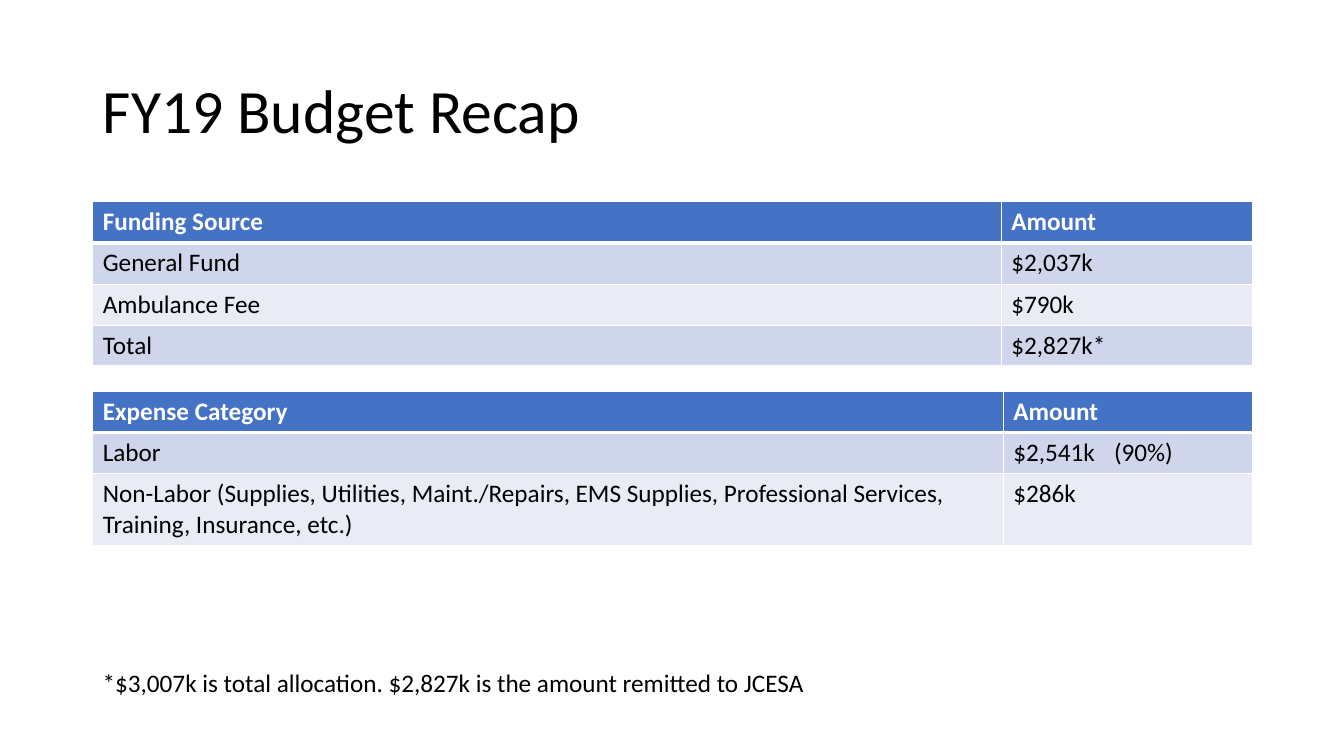
from dataclasses import dataclass

import pptx
import pptx.dml.color
import pptx.enum.text
import pptx.oxml
import pptx.oxml.ns
import pptx.util
from pptx.util import Inches

RGB = pptx.dml.color.RGBColor
BLACK = RGB(0x00, 0x00, 0x00)
WHITE = RGB(0xFF, 0xFF, 0xFF)
BLUE = RGB(0x44, 0x72, 0xC4)
BANDS = (RGB(0xE9, 0xEB, 0xF5), RGB(0xCF, 0xD5, 0xEA))

LEFT = Inches(0.92)
WIDTH = Inches(11.5)
FONT = "Calibri"


@dataclass
class Budget:
    top: float
    split: float
    heights: list[float]
    rows: list[tuple[str, str]]


BUDGETS = [
    Budget(2, 9.01, [0.41, 0.41, 0.4, 0.4], [
        ("Funding Source", "Amount"),
        ("General Fund", "$2,037k"),
        ("Ambulance Fee", "$790k"),
        ("Total", "$2,827k*"),
    ]),
    Budget(3.88, 9.03, [0.41, 0.41, 0.69], [
        ("Expense Category", "Amount"),
        ("Labor", "$2,541k\t(90%)"),
        ("Non-Labor (Supplies, Utilities, Maint./Repairs, EMS Supplies, "
         "Professional Services, Training, Insurance, etc.)", "$286k"),
    ]),
]


def write(frame, text: str, size: float = 18, color: RGB = BLACK,
          bold: bool = False) -> None:
    frame.text = text
    for run in frame.paragraphs[0].runs:
        run.font.name = FONT
        run.font.size = pptx.util.Pt(size)
        run.font.bold = bold
        run.font.color.rgb = color


def rule(cell, row: int) -> None:
    """Draw white cell borders, heavy between the header and the body."""
    props = cell._tc.get_or_add_tcPr()
    heavy = {0: "lnB", 1: "lnT"}.get(row)
    for side in ("lnL", "lnR", "lnT", "lnB"):
        width = pptx.util.Pt(3 if side == heavy else 1)
        props.append(pptx.oxml.parse_xml(
            f'<a:{side} {pptx.oxml.ns.nsdecls("a")} w="{width}">'
            f'<a:solidFill><a:srgbClr val="{WHITE}"/></a:solidFill></a:{side}>'))


def draw(slide, budget: Budget) -> None:
    table = slide.shapes.add_table(
        len(budget.rows), 2, LEFT, Inches(budget.top), WIDTH,
        Inches(sum(budget.heights))).table
    table.columns[0].width = Inches(budget.split)
    table.columns[1].width = WIDTH - Inches(budget.split)
    for row, texts in enumerate(budget.rows):
        table.rows[row].height = Inches(budget.heights[row])
        head = row == 0
        for col, text in enumerate(texts):
            cell = table.cell(row, col)
            rule(cell, row)
            cell.fill.solid()
            cell.fill.fore_color.rgb = BLUE if head else BANDS[row % 2]
            write(cell.text_frame, text, color=WHITE if head else BLACK, bold=head)


def main() -> None:
    deck = pptx.Presentation()
    deck.slide_width = Inches(13.33)
    deck.slide_height = Inches(7.5)
    slide = deck.slides.add_slide(deck.slide_layouts.get_by_name("Title Only"))

    title = slide.shapes.title
    title.left, title.top = LEFT, Inches(0.4)
    title.width, title.height = WIDTH, Inches(1.45)
    frame = title.text_frame
    write(frame, "FY19 Budget Recap", 44)
    frame.auto_size = pptx.enum.text.MSO_AUTO_SIZE.NONE
    frame.vertical_anchor = pptx.enum.text.MSO_ANCHOR.MIDDLE
    frame.paragraphs[0].alignment = pptx.enum.text.PP_ALIGN.LEFT
    frame.paragraphs[0].line_spacing = 0.9

    for budget in BUDGETS:
        draw(slide, budget)

    note = slide.shapes.add_textbox(LEFT, Inches(6.57), WIDTH, Inches(0.4))
    note.text_frame.word_wrap = True
    note.text_frame.auto_size = pptx.enum.text.MSO_AUTO_SIZE.SHAPE_TO_FIT_TEXT
    write(note.text_frame,
          "*$3,007k is total allocation. $2,827k is the amount remitted to JCESA")

    deck.save("out.pptx")


if __name__ == "__main__":
    main()
